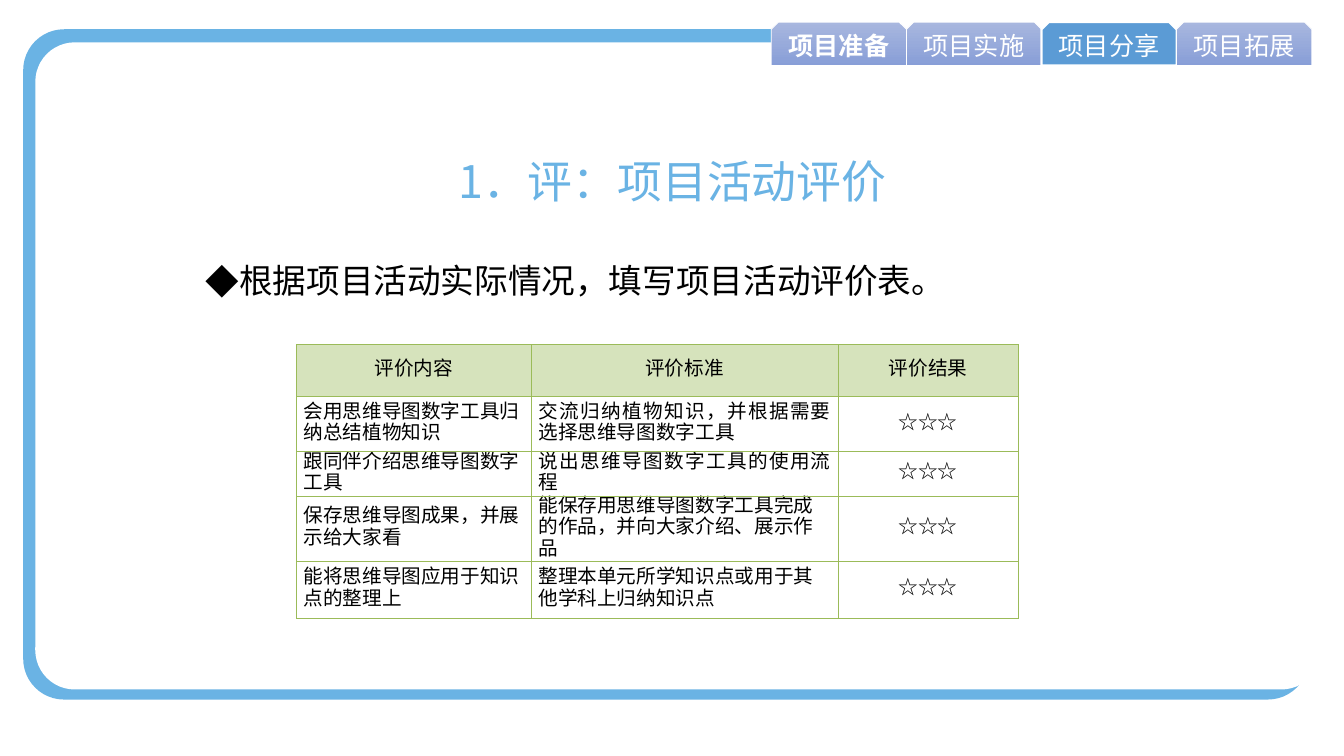
from lxml.etree import SubElement
from pptx import Presentation
from pptx.dml.color import RGBColor
from pptx.enum.shapes import MSO_SHAPE
from pptx.enum.text import MSO_ANCHOR, MSO_AUTO_SIZE, PP_ALIGN
from pptx.oxml.ns import qn
from pptx.util import Inches, Pt

COLORS = {name: RGBColor.from_string(value) for name, value in {
    "frame": "6AB3E4", "white": "FFFFFF", "black": "000000", "active": "5B9BD5",
    "tab_top": "A8B7DF", "tab_bottom": "889ED7", "header": "D6E3BC"}.items()}
BORDER = "9BBB59"
FONT = "Noto Sans CJK SC"


def place(shape, left, top, width, height):
    box = {"left": left, "top": top, "width": width, "height": height}
    for name, value in box.items():
        setattr(shape, name, Inches(value))


def write(tf, text, size, color, font=FONT, bold=False, insets=None, **layout):
    tf.word_wrap = True
    if insets is not None:
        for side in ("left", "top", "right", "bottom"):
            setattr(tf, f"margin_{side}", Inches(insets))
    p = tf.paragraphs[0]
    for name, value in layout.items():
        setattr(p, name, value)
    r = p.add_run()
    r.text = text
    formats = {"size": Pt(size), "name": font, "bold": bold}
    for name, value in formats.items():
        setattr(r.font, name, value)
    r.font.color.rgb = COLORS[color]
    SubElement(r.font._element, qn("a:ea"), typeface=FONT)


prs = Presentation()
prs.slide_width, prs.slide_height = Inches(13.33), Inches(7.5)
s = prs.slides.add_slide(prs.slide_layouts[1])
title, body = s.placeholders

# Rounded frame, behind the placeholders
frame = [("frame", (0.23, 0.29, 12.75, 6.65)), ("white", (0.35, 0.42, 12.75, 6.42))]
for i, (color, box) in enumerate(frame):
    sp = s.shapes.add_shape(MSO_SHAPE.ROUNDED_RECTANGLE, *map(Inches, box))
    sp.adjustments[0] = 0.061
    sp.shadow.inherit = False
    sp.fill.solid()
    sp.fill.fore_color.rgb = COLORS[color]
    sp.line.fill.background()
    s.shapes.element.insert(2 + i, sp.element)

# Title
place(title, 3.56, 1.54, 6.22, 0.58)
title.text_frame.auto_size = MSO_AUTO_SIZE.NONE
title.text_frame.vertical_anchor = MSO_ANCHOR.MIDDLE
write(title.text_frame, "1．评：项目活动评价", 32, "frame",
      alignment=PP_ALIGN.CENTER, line_spacing=0.9)

# Instruction with a diamond bullet
place(body, 1.44, 2.32, 8.89, 0.72)
tf = body.text_frame
tf.auto_size = MSO_AUTO_SIZE.NONE
pPr = tf.paragraphs[0]._p.get_or_add_pPr()
pPr.set("marL", "0")
pPr.set("indent", str(Inches(0.5)))
SubElement(pPr, qn("a:buFont"), typeface=FONT)
SubElement(pPr, qn("a:buChar"), char="◆")
write(tf, "根据项目活动实际情况，填写项目活动评价表。", 24, "black",
      line_spacing=Pt(44), space_before=Pt(0))

# Navigation tabs
TAB_LEFT, TAB_WIDTH, ACTIVE = 7.65, 1.34, 2
for i, label in enumerate(["项目准备", "项目实施", "项目分享", "项目拓展"]):
    tab = s.shapes.add_shape(MSO_SHAPE.SNIP_2_SAME_RECTANGLE, Inches(TAB_LEFT + i * TAB_WIDTH),
                             Inches(0.22), Inches(TAB_WIDTH), Inches(0.43))
    tab.shadow.inherit = False
    if i == ACTIVE:
        tab.fill.solid()
        tab.fill.fore_color.rgb = COLORS["active"]
    else:
        tab.fill.gradient()
        tab.fill.gradient_angle = 270
        for stop, color in zip(tab.fill.gradient_stops, ("tab_top", "tab_bottom")):
            stop.color.rgb = COLORS[color]
    tab.line.color.rgb = COLORS["white"]
    tab.line.width = Pt(1.5 if i == ACTIVE else 0.5)
    tab.text_frame.vertical_anchor = MSO_ANCHOR.MIDDLE
    write(tab.text_frame, label, 18, "white", font="Arial", bold=i == 0, insets=0,
          alignment=PP_ALIGN.CENTER)

# Evaluation table
STARS = "☆☆☆"
rows = [
    ("评价内容", "评价标准", "评价结果"),
    ("会用思维导图数字工具归纳总结植物知识", "交流归纳植物知识，并根据需要选择思维导图数字工具", STARS),
    ("跟同伴介绍思维导图数字工具", "说出思维导图数字工具的使用流程", STARS),
    ("保存思维导图成果，并展示给大家看", "能保存用思维导图数字工具完成的作品，并向大家介绍、展示作品", STARS),
    ("能将思维导图应用于知识点的整理上", "整理本单元所学知识点或用于其他学科上归纳知识点", STARS),
]
col_widths = [2.33, 3.04, 1.79]
row_heights = [0.51, 0.55, 0.44, 0.64, 0.56]
table = s.shapes.add_table(len(rows), len(col_widths), Inches(2.94), Inches(3.42),
                           Inches(sum(col_widths)), Inches(sum(row_heights))).table
table.first_row = table.horz_banding = False
for col, width in zip(table.columns, col_widths):
    col.width = Inches(width)
for i, (row, height) in enumerate(zip(rows, row_heights)):
    table.rows[i].height = Inches(height)
    for j, text in enumerate(row):
        cell = table.cell(i, j)
        cell.vertical_anchor = MSO_ANCHOR.MIDDLE
        cell.margin_left = cell.margin_right = Inches(0.07)
        cell.margin_top = cell.margin_bottom = 0
        tcPr = cell._tc.get_or_add_tcPr()
        for side in ("lnL", "lnR", "lnT", "lnB"):
            ln = SubElement(tcPr, qn(f"a:{side}"), w=str(Pt(0.5)))
            SubElement(SubElement(ln, qn("a:solidFill")), qn("a:srgbClr"), val=BORDER)
        if i == 0:
            cell.fill.solid()
            cell.fill.fore_color.rgb = COLORS["header"]
        else:
            cell.fill.background()
        if i == 0 or j == 2:
            align = PP_ALIGN.CENTER
        else:
            align = PP_ALIGN.JUSTIFY if j == 1 and i < 3 else PP_ALIGN.LEFT
        write(cell.text_frame, text, 14, "black", alignment=align, line_spacing=Pt(15.6))

prs.save("out.pptx")
